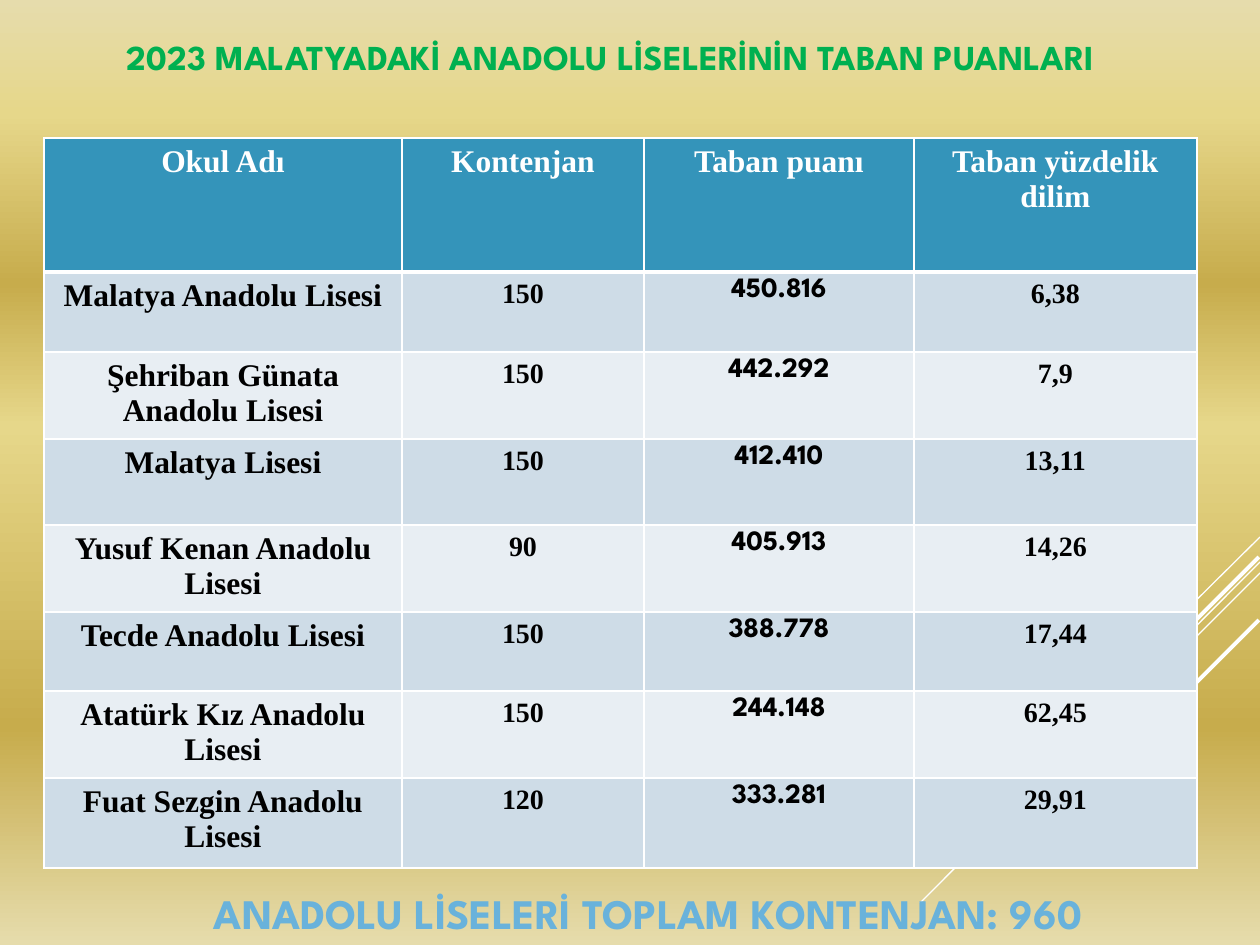
from lxml import etree
from pptx import Presentation
from pptx import util as u
from pptx.dml.color import RGBColor
from pptx.enum import shapes, text
from pptx.oxml import ns

# Content
TITLE = "2023 MALATYADAKİ ANADOLU LİSELERİNİN TABAN PUANLARI"
TOTAL = "ANADOLU LİSELERİ TOPLAM KONTENJAN: 960"
HEADINGS = ("Okul Adı", "Kontenjan", "Taban puanı", "Taban yüzdelik dilim")
SCHOOLS = [
    ("Malatya Anadolu Lisesi", "150", "450.816", "6,38"),
    ("Şehriban Günata Anadolu Lisesi", "150", "442.292", "7,9"),
    ("Malatya Lisesi", "150", "412.410", "13,11"),
    ("Yusuf Kenan Anadolu Lisesi", "90", "405.913", "14,26"),
    ("Tecde Anadolu Lisesi", "150", "388.778", "17,44"),
    ("Atatürk Kız Anadolu Lisesi", "150", "244.148", "62,45"),
    ("Fuat Sezgin Anadolu Lisesi", "120", "333.281", "29,91"),
]

# Layout in px, 126 to the inch
COLUMN_WIDTHS = (358, 242, 270, 283)
ROW_HEIGHTS = (134, 80, 87, 86, 87, 79, 87, 90)
STRIPES = [  # x1, y1, x2, y2, width in points
    (1260, 537, 1155, 641, 0.75),
    (1260, 562, 920, 903, 0.75),
    (1260, 573, 1043, 790, 0.75),
    (1259, 557, 1061, 755, 2.25),
    (1259, 620, 1115, 764, 2.25),
]

# Style
SPARTAN, TIMES = "League Spartan", "Times New Roman"
COLUMN_FONTS = ((TIMES, 18), (TIMES, 16), (SPARTAN, 16), (TIMES, 16))
HEADER_FILL, BAND_FILLS = "3494BA", ("CEDCE7", "E8EEF3")
GRADIENT = [(0, "E6DCAC"), (12, "E6D78A"), (30, "C7AC4C"),
            (45, "E6D78A"), (77, "C7AC4C"), (100, "E6DCAC")]


def px(*lengths):
    return [u.Emu(round(n * 914400 / 126)) for n in lengths]


def color(value):
    return RGBColor.from_string(value)


def child(parent, tag, **attributes):
    return etree.SubElement(parent, ns.qn(tag), attributes)


def solid_line(tag, value, points):
    line = etree.Element(ns.qn(tag), w=str(int(u.Pt(points))))
    child(child(line, "a:solidFill"), "a:srgbClr", val=value)
    return line


def write(frame, words, font, size, value):
    frame.text = words
    paragraph = frame.paragraphs[0]
    paragraph.alignment = text.PP_ALIGN.CENTER
    style = paragraph.runs[0].font
    style.name, style.size, style.bold = font, u.Pt(size), True
    style.color.rgb = color(value)
    return paragraph


def style_cell(cell, fill, bottom):
    cell.fill.solid()
    cell.fill.fore_color.rgb = color(fill)
    properties = cell._tc.get_or_add_tcPr()
    for i, (side, points) in enumerate(
            (("L", 1), ("R", 1), ("T", 1), ("B", bottom))):
        properties.insert(i, solid_line(f"a:ln{side}", "FFFFFF", points))


def paint_background(slide):
    fill = slide.background.fill
    fill.gradient()
    fill.gradient_angle = 270
    stops = fill.gradient_stops
    stop_list = stops[0]._gs.getparent()
    for stop in list(stop_list):
        stop_list.remove(stop)
    for position, value in GRADIENT:
        stop = child(stop_list, "a:gs", pos=str(position * 1000))
        child(stop, "a:srgbClr", val=value)


def add_stripes(slide):
    for *ends, points in STRIPES:
        stripe = slide.shapes.add_connector(
            shapes.MSO_CONNECTOR.STRAIGHT, *px(*ends))
        stripe.line.color.rgb = color("FFFFFF")
        stripe.line.width = u.Pt(points)
        child(stripe._element.spPr, "a:effectLst")


def add_school_table(slide):
    rows = [HEADINGS] + SCHOOLS
    table = slide.shapes.add_table(
        len(rows), len(HEADINGS),
        *px(44, 138, sum(COLUMN_WIDTHS), sum(ROW_HEIGHTS))).table
    for column, width in zip(table.columns, px(*COLUMN_WIDTHS)):
        column.width = width
    for row, height in zip(table.rows, px(*ROW_HEIGHTS)):
        row.height = height
    for r, values in enumerate(rows):
        for c, value in enumerate(values):
            cell = table.cell(r, c)
            if r == 0:
                write(cell.text_frame, value, TIMES, 18, "FFFFFF")
                style_cell(cell, HEADER_FILL, 3)
            else:
                write(cell.text_frame, value, *COLUMN_FONTS[c], "000000")
                style_cell(cell, BAND_FILLS[(r - 1) % 2], 3 if r == 0 else 1)
                if r == 1:  # keep the thick rule under the headings
                    cell._tc.tcPr.find(ns.qn("a:lnT")).set("w", str(int(u.Pt(3))))


def add_total(slide):
    total = slide.shapes.add_textbox(*px(25, 869, 1172, 88))
    frame = total.text_frame
    frame.word_wrap = True
    frame.vertical_anchor = text.MSO_ANCHOR.MIDDLE
    paragraph = write(frame, TOTAL, SPARTAN, 24, "69B2DB")
    paragraph._p.get_or_add_pPr().set("marL", str(px(74)[0]))
    paragraph.runs[0].font._element.insert(0, solid_line("a:ln", "246781", 0.5))


def main():
    deck = Presentation()
    deck.slide_width, deck.slide_height = px(1260, 945)
    slide = deck.slides.add_slide(deck.slide_layouts[5])
    paint_background(slide)
    add_stripes(slide)

    # Title
    title = slide.shapes.title
    title.left, title.top, title.width, title.height = px(44, 3, 1134, 107)
    title.text_frame.vertical_anchor = text.MSO_ANCHOR.MIDDLE
    write(title.text_frame, TITLE, SPARTAN, 20, "00B050")

    add_school_table(slide)
    add_total(slide)
    deck.save("out.pptx")


if __name__ == "__main__":
    main()
